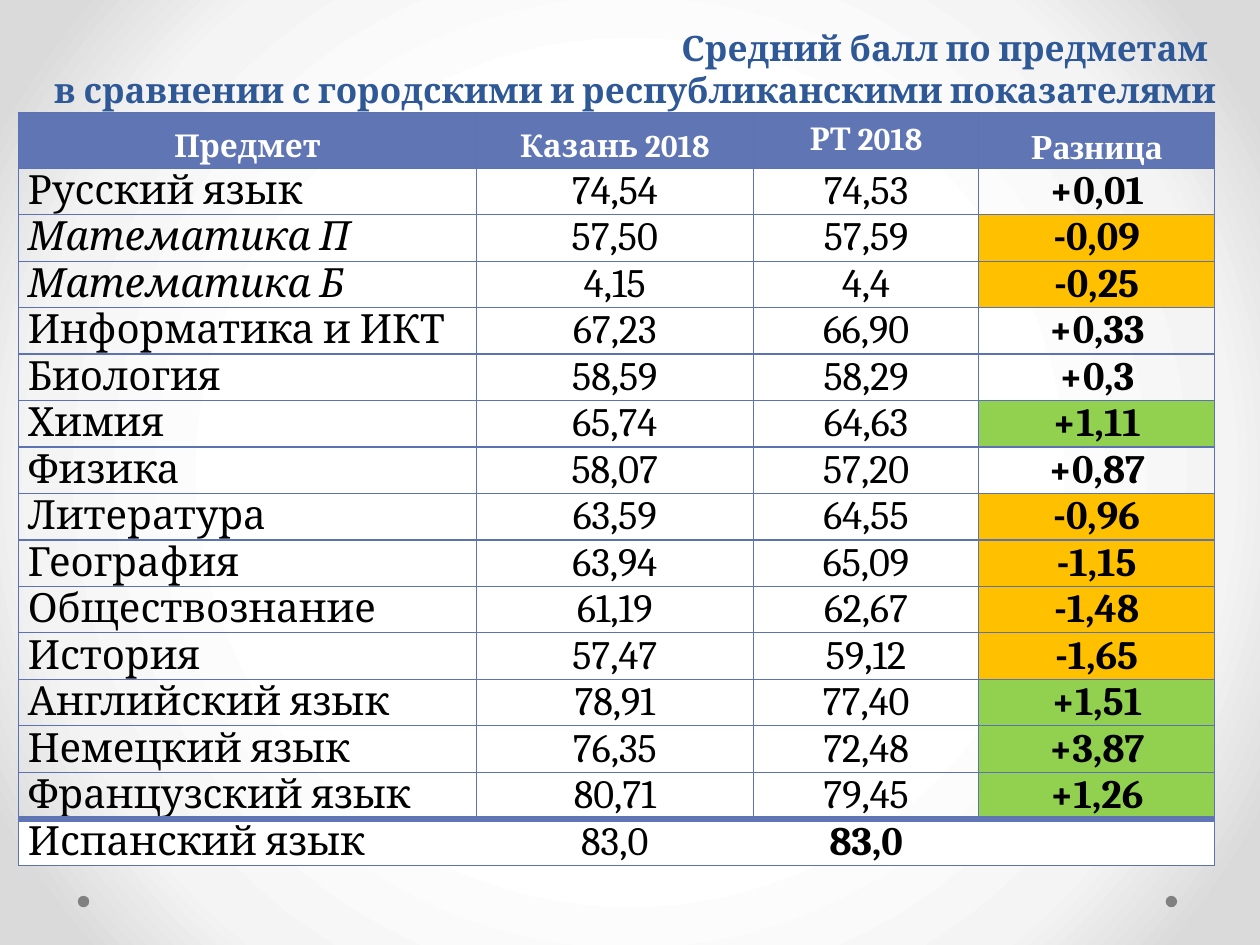
from dataclasses import dataclass

from lxml import etree
from pptx import Presentation
from pptx import util as u
from pptx.dml.color import RGBColor
from pptx.enum import shapes, text
from pptx.oxml.ns import qn


@dataclass(frozen=True)
class Theme:
    font: str = "Cambria"
    accent_font: str = "Times New Roman"
    title: str = "2F5897"
    header: str = "6076B4"
    border: str = "5C72B2"
    lower: str = "FFC000"
    higher: str = "92D050"
    dot: str = "808080"
    white: str = "FFFFFF"
    black: str = "000000"
    background: tuple = ((50, "FFFFFF"), (76, "F4F4F4"), (92, "DADADA"))
    title_size: int = 20
    header_size: int = 18
    accent_size: int = 20
    body_size: int = 23
    thin: float = 0.75
    thick: float = 4


HEADERS = ("Предмет", "Казань 2018", "РТ 2018", "Разница")
SCORES = (
    ("Русский язык", "74,54", "74,53", "+0,01"),
    ("Математика П", "57,50", "57,59", "-0,09"),
    ("Математика Б", "4,15", "4,4", "-0,25"),
    ("Информатика и ИКТ", "67,23", "66,90", "+0,33"),
    ("Биология", "58,59", "58,29", "+0,3"),
    ("Химия", "65,74", "64,63", "+1,11"),
    ("Физика", "58,07", "57,20", "+0,87"),
    ("Литература", "63,59", "64,55", "-0,96"),
    ("География", "63,94", "65,09", "-1,15"),
    ("Обществознание", "61,19", "62,67", "-1,48"),
    ("История", "57,47", "59,12", "-1,65"),
    ("Английский язык", "78,91", "77,40", "+1,51"),
    ("Немецкий язык", "76,35", "72,48", "+3,87"),
    ("Французский язык", "80,71", "79,45", "+1,26"),
    ("Испанский язык", "83,0", "83,0", ""),
)
COLUMN_WIDTHS = (9.22, 5.59, 4.54, 4.76)
HEADER_HEIGHT, ROW_HEIGHT = 1.13, 0.93


class SlideBuilder:
    def __init__(self, slide, theme):
        self.slide = slide
        self.theme = theme

    def background(self):
        """Radial gradient from the centre of the slide."""
        self.slide.background.fill.gradient()
        gradient = self.slide.element.find(".//" + qn("a:gradFill"))
        for child in list(gradient):
            gradient.remove(child)
        stops = etree.SubElement(gradient, qn("a:gsLst"))
        for position, color in self.theme.background:
            stop = etree.SubElement(stops, qn("a:gs"), pos=str(position * 1000))
            etree.SubElement(stop, qn("a:srgbClr"), val=color)
        circle = etree.SubElement(gradient, qn("a:path"), {"path": "circle"})
        etree.SubElement(circle, qn("a:fillToRect"),
                         dict.fromkeys("ltrb", "50000"))

    def dot(self, left, top, size):
        shape = self.slide.shapes.add_shape(
            shapes.MSO_SHAPE.OVAL, u.Cm(left), u.Cm(top), u.Cm(size), u.Cm(size))
        shape.shadow.inherit = False
        shape.fill.solid()
        shape.fill.fore_color.rgb = RGBColor.from_string(self.theme.dot)
        shape.line.fill.background()

    def styled_text(self, paragraph, wording, size, color, align,
                    font=None, bold=False, italic=False):
        paragraph.text = wording
        paragraph.alignment = align
        for run in paragraph.runs:
            run.font.name = font or self.theme.font
            run.font.size = u.Pt(size)
            run.font.color.rgb = RGBColor.from_string(color)
            run.font.bold = bold
            run.font.italic = italic

    def title(self, wording, left, top, width, height):
        title = self.slide.shapes.title
        title.left, title.top = u.Cm(left), u.Cm(top)
        title.width, title.height = u.Cm(width), u.Cm(height)
        frame = title.text_frame
        frame.word_wrap = True
        frame.vertical_anchor = text.MSO_ANCHOR.MIDDLE
        self.styled_text(frame.paragraphs[0], wording, self.theme.title_size,
                         self.theme.title, text.PP_ALIGN.RIGHT, bold=True)

    def borders(self, cell, **widths):
        """Draw each side (L, R, T, B); a width of 0 hides the line."""
        properties = cell._tc.get_or_add_tcPr()
        for side in "LRTB":
            width = widths.get(side, self.theme.thin)
            line = etree.SubElement(properties, qn(f"a:ln{side}"),
                                    w=str(int(u.Pt(width))))
            if not width:
                etree.SubElement(line, qn("a:noFill"))
                continue
            color = (self.theme.header if width == self.theme.thick
                     else self.theme.border)
            fill = etree.SubElement(line, qn("a:solidFill"))
            etree.SubElement(fill, qn("a:srgbClr"), val=color)

    def cell(self, cell, wording, fill, **style):
        cell.margin_left = cell.margin_right = u.Cm(0.18)
        cell.margin_top = cell.margin_bottom = 0
        cell.vertical_anchor = text.MSO_ANCHOR.MIDDLE
        if fill:
            cell.fill.solid()
            cell.fill.fore_color.rgb = RGBColor.from_string(fill)
        else:
            cell.fill.background()
        self.styled_text(cell.text_frame.paragraphs[0], wording, **style)

    def difference_fill(self, difference):
        value = float(difference.replace(",", "."))
        if value < 0:
            return self.theme.lower
        return self.theme.higher if value > 1 else None

    def table(self, left, top):
        theme, align = self.theme, text.PP_ALIGN
        height = HEADER_HEIGHT + ROW_HEIGHT * len(SCORES)
        table = self.slide.shapes.add_table(
            len(SCORES) + 1, len(HEADERS), u.Cm(left), u.Cm(top),
            u.Cm(sum(COLUMN_WIDTHS)), u.Cm(height)).table
        table.first_row = table.horz_banding = False
        for column, width in zip(table.columns, COLUMN_WIDTHS):
            column.width = u.Cm(width)
        for index, row in enumerate(table.rows):
            row.height = u.Cm(ROW_HEIGHT if index else HEADER_HEIGHT)

        # Header row
        final_column = len(HEADERS) - 1
        for column, wording in enumerate(HEADERS):
            cell = table.cell(0, column)
            accent = column == final_column
            self.borders(cell)
            self.cell(cell, wording, theme.header, color=theme.white, bold=True,
                      size=theme.accent_size if accent else theme.header_size,
                      font=theme.accent_font if accent else None,
                      align=align.CENTER)
            if wording != "РТ 2018":
                cell.text_frame.paragraphs[0].line_spacing = 1.4

        # Subject rows; the last one is set off by a thick line
        for row, record in enumerate(SCORES, start=1):
            last = row == len(SCORES)
            for column, wording in enumerate(record):
                cell = table.cell(row, column)
                sides = {}
                if last:
                    sides = {"T": theme.thick}
                    if column > 0:
                        sides["L"] = 0
                    if column < final_column:
                        sides["R"] = 0
                elif row == len(SCORES) - 1:
                    sides = {"B": theme.thick}
                self.borders(cell, **sides)
                fill = theme.white if last else None
                if column == final_column and wording:
                    fill = self.difference_fill(wording)
                self.cell(cell, wording, fill, size=theme.body_size,
                          color=theme.black,
                          align=align.CENTER if column else align.JUSTIFY,
                          bold=column == final_column or (last and column == 2),
                          italic=wording.startswith("Математика"))


def main():
    presentation = Presentation()
    presentation.slide_width, presentation.slide_height = u.Cm(25.4), u.Cm(19.05)
    slide = presentation.slides.add_slide(presentation.slide_layouts[5])
    builder = SlideBuilder(slide, Theme())
    builder.background()
    for left in (23.5, 1.57):
        builder.dot(left, 18.06, 0.23)
    builder.title("Средний балл по предметам \vв сравнении с городскими "
                  "и республиканскими показателями", 0.76, 0.36, 24, 2.03)
    builder.table(0.38, 2.26)
    presentation.save("out.pptx")


if __name__ == "__main__":
    main()
